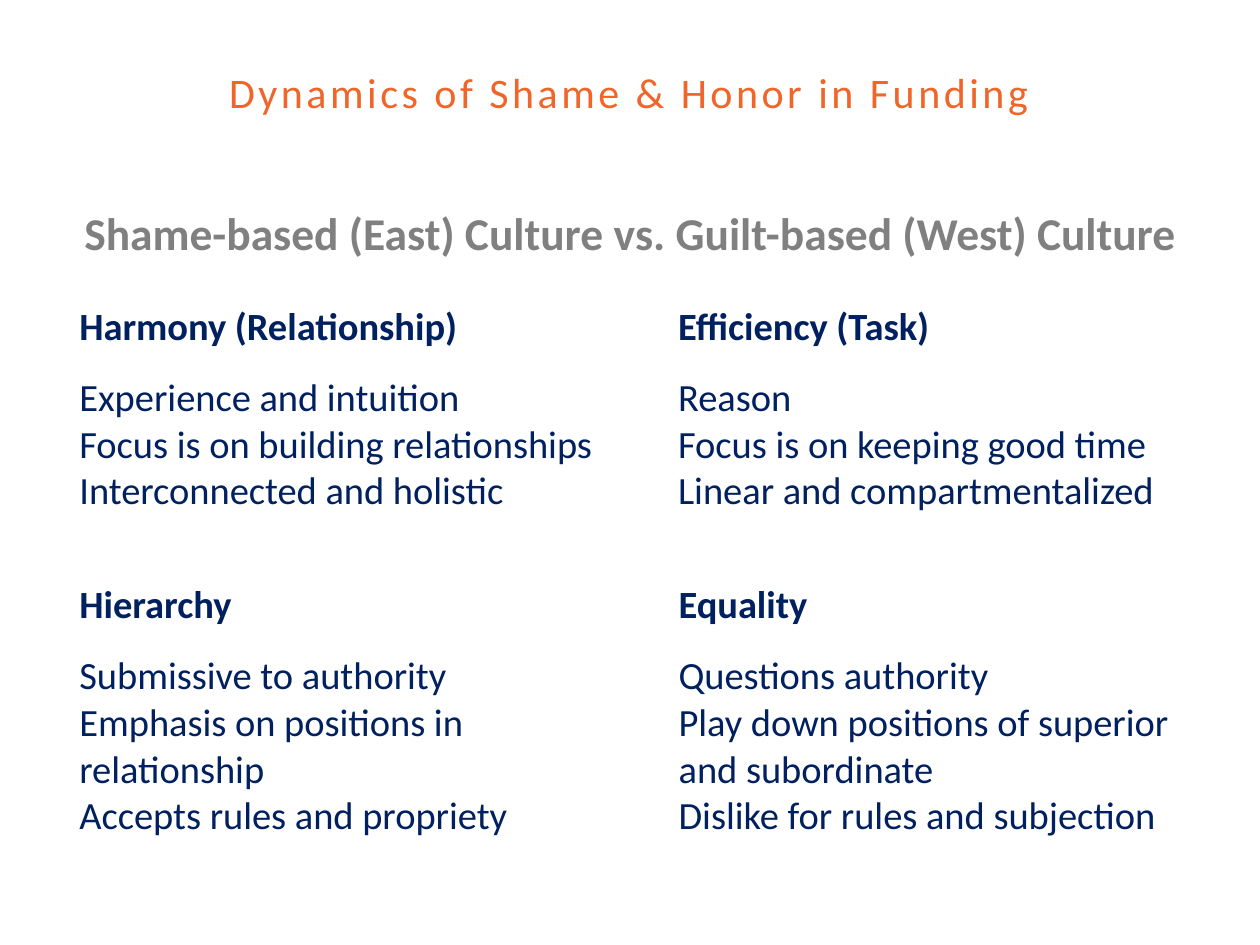
import pptx
import pptx.util
import pptx.dml.color
import pptx.enum.text
from dataclasses import dataclass

Cm = pptx.util.Cm
Anchor = pptx.enum.text.MSO_ANCHOR
Align = pptx.enum.text.PP_ALIGN


@dataclass(frozen=True)
class Theme:
    font: str = "Calibri"
    orange: str = "F0652A"
    gray: str = "808080"
    navy: str = "002060"
    title_size: int = 24
    subtitle_size: int = 26
    body_size: int = 22


THEME = Theme()

TITLE = "Dynamics of Shame & Honor in Funding"
SUBTITLE = "Shame-based (East) Culture vs. Guilt-based (West) Culture"

COMPARISONS = [
    {
        "top": 5.87,
        "columns": (11.28, 0.79, 10.67),
        "headings": ("Harmony (Relationship)", "Efficiency (Task)"),
        "points": (
            ["Experience and intuition", "Focus is on building relationships",
             "Interconnected and holistic"],
            ["Reason", "Focus is on keeping good time",
             "Linear and compartmentalized"],
        ),
    },
    {
        "top": 11.48,
        "columns": (11.48, 0.59, 10.67),
        "headings": ("Hierarchy", "Equality"),
        "points": (
            ["Submissive to authority", "Emphasis on positions in relationship",
             "Accepts rules and propriety"],
            ["Questions authority", "Play down positions of superior and subordinate",
             "Dislike for rules and subjection"],
        ),
    },
]

LEFT, WIDTH = 1.35, 22.74
ROW_HEIGHTS = (1.32, 3.18)
CELL_MARGIN = 0.25


def write_text(text_frame, lines, *, size, color, bold=False, align=Align.LEFT, spacing=None):
    text_frame.word_wrap = True
    for index, line in enumerate(lines):
        paragraph = text_frame.add_paragraph() if index else text_frame.paragraphs[0]
        paragraph.alignment = align
        run = paragraph.add_run()
        run.text = line
        run.font.name = THEME.font
        run.font.size = pptx.util.Pt(size)
        run.font.bold = bold
        run.font.color.rgb = pptx.dml.color.RGBColor.from_string(color)
        if spacing:
            run.font._element.set("spc", str(spacing * 100))


def add_text_box(slide, box, text, anchor=Anchor.TOP, **text_format):
    shape = slide.shapes.add_textbox(*map(Cm, box))
    shape.text_frame.vertical_anchor = anchor
    write_text(shape.text_frame, [text], align=Align.CENTER, **text_format)


def add_comparison(slide, comparison):
    columns = comparison["columns"]
    table = slide.shapes.add_table(
        len(ROW_HEIGHTS), len(columns), Cm(LEFT), Cm(comparison["top"]),
        Cm(WIDTH), Cm(sum(ROW_HEIGHTS))).table
    table.first_row = table.horz_banding = False
    for column, width in zip(table.columns, columns):
        column.width = Cm(width)
    for row, height in zip(table.rows, ROW_HEIGHTS):
        row.height = Cm(height)
    for cell in table.iter_cells():
        cell.fill.background()
        cell.margin_left = cell.margin_right = Cm(CELL_MARGIN)
        cell.margin_top = cell.margin_bottom = Cm(CELL_MARGIN)

    sides = zip((0, 2), comparison["headings"], comparison["points"])
    for column_index, heading, points in sides:
        heading_cell = table.cell(0, column_index)
        heading_cell.vertical_anchor = Anchor.MIDDLE
        write_text(heading_cell.text_frame, [heading],
                   size=THEME.body_size, color=THEME.navy, bold=True)
        write_text(table.cell(1, column_index).text_frame, points,
                   size=THEME.body_size, color=THEME.navy)


def main():
    presentation = pptx.Presentation()
    presentation.slide_width, presentation.slide_height = Cm(25.4), Cm(19.05)
    slide = presentation.slides.add_slide(presentation.slide_layouts[6])
    add_text_box(slide, (3.2, 1.09, 18.97, 1.52), TITLE, anchor=Anchor.MIDDLE,
                 size=THEME.title_size, color=THEME.orange, spacing=2)
    for comparison in COMPARISONS:
        add_comparison(slide, comparison)
    add_text_box(slide, (LEFT, 4.01, WIDTH, 1.37), SUBTITLE,
                 size=THEME.subtitle_size, color=THEME.gray, bold=True)
    presentation.save("out.pptx")


if __name__ == "__main__":
    main()
